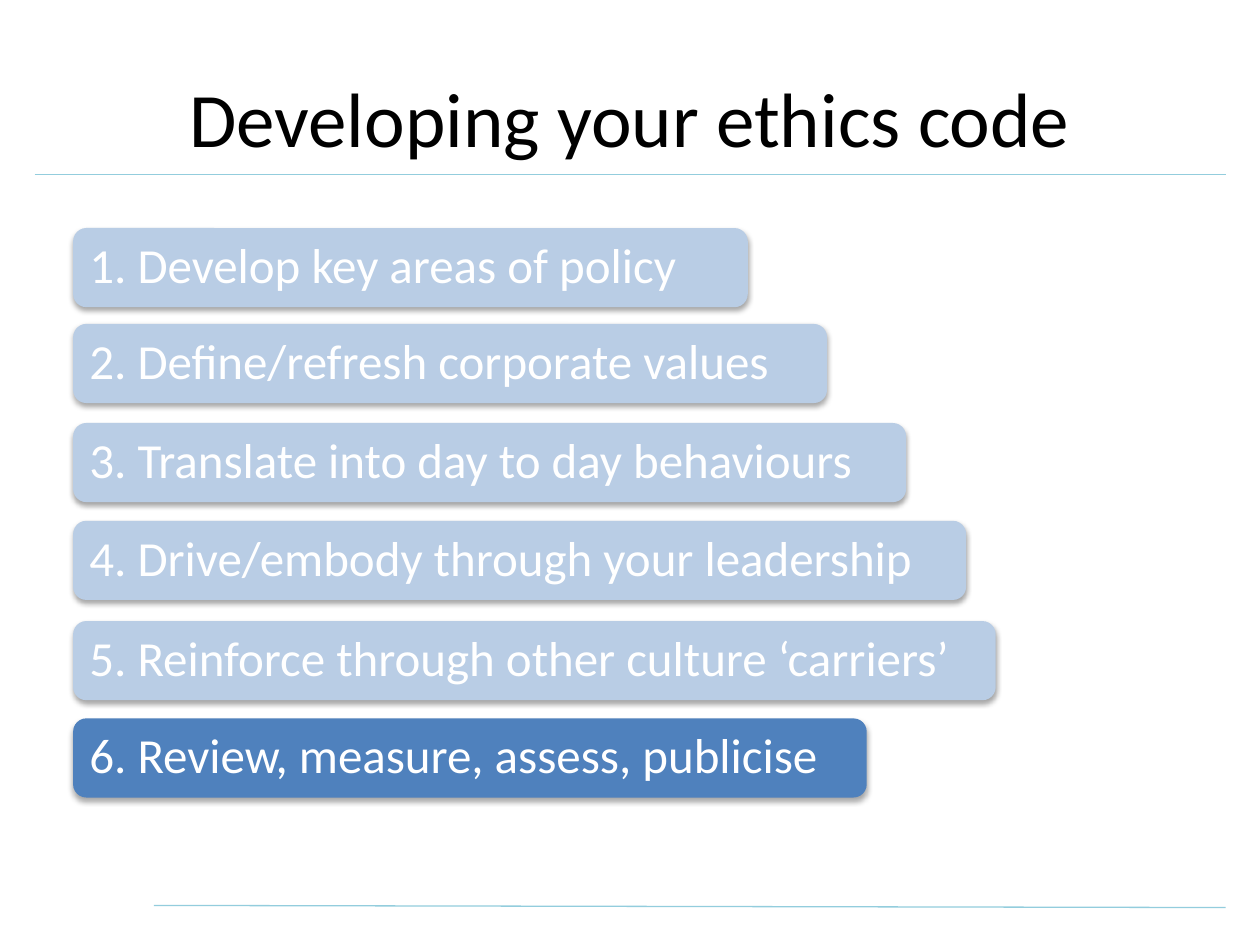
from lxml import etree
from pptx import Presentation
from pptx.dml.color import RGBColor
from pptx.enum import shapes, text
from pptx.oxml import parse_xml
from pptx.oxml.ns import nsdecls, qn
from pptx.util import Pt

BLACK = RGBColor(0x00, 0x00, 0x00)
WHITE = RGBColor(0xFF, 0xFF, 0xFF)
RULE = RGBColor(0x93, 0xCD, 0xDD)
PALE = RGBColor(0xB9, 0xCD, 0xE5)
STRONG = RGBColor(0x4F, 0x81, 0xBD)

FONT = "Calibri"
STEP_LEFT, STEP_HEIGHT = 41.8, 45.2

# wording, top, width, fill
STEPS = [
    ("1. Develop key areas of policy", 130.3, 385.5, PALE),
    ("2. Define/refresh corporate values", 185.1, 430.8, PALE),
    ("3. Translate into day to day behaviours", 241.7, 476, PALE),
    ("4. Drive/embody through your leadership", 297.6, 510.3, PALE),
    ("5. Reinforce through other culture ‘carriers’", 354.9, 527.2, PALE),
    ("6. Review, measure, assess, publicise", 410.5, 453.5, STRONG),
]


def add_rule(slide, x1, y1, x2, y2):
    line = slide.shapes.add_connector(
        shapes.MSO_CONNECTOR.STRAIGHT, Pt(x1), Pt(y1), Pt(x2), Pt(y2))
    line.line.color.rgb = RULE
    line.line.width = Pt(0.75)
    etree.SubElement(line._element.spPr, qn("a:effectLst"))


def write(tf, wording, size, color, align):
    tf.word_wrap = True
    tf.vertical_anchor = text.MSO_ANCHOR.MIDDLE
    p = tf.paragraphs[0]
    p.alignment = align
    r = p.add_run()
    r.text = wording
    r.font.name = FONT
    r.font.size = Pt(size)
    r.font.color.rgb = color
    return p


def add_title(slide, wording):
    box = slide.shapes.add_textbox(Pt(36), Pt(21.6), Pt(648), Pt(90))
    write(box.text_frame, wording, 44, BLACK, text.PP_ALIGN.CENTER)


def drop_shadow(sp):
    """Give the shape a soft shadow straight below it."""
    sp.shadow.inherit = False
    effects = sp._element.spPr.find(qn("a:effectLst"))
    effects.append(parse_xml(
        f'<a:outerShdw {nsdecls("a")} blurRad="{Pt(3.1)}" dist="{Pt(1.8)}" '
        'dir="5400000" rotWithShape="0"><a:srgbClr val="000000">'
        '<a:alpha val="35000"/></a:srgbClr></a:outerShdw>'))


def add_step(slide, wording, top, width, fill):
    sp = slide.shapes.add_shape(
        shapes.MSO_SHAPE.ROUNDED_RECTANGLE,
        Pt(STEP_LEFT), Pt(top), Pt(width), Pt(STEP_HEIGHT))
    sp.fill.solid()
    sp.fill.fore_color.rgb = fill
    sp.line.fill.background()
    drop_shadow(sp)
    tf = sp.text_frame
    tf.margin_left = tf.margin_right = Pt(7.2)
    tf.margin_top = tf.margin_bottom = Pt(7.2)
    p = write(tf, wording, 28, WHITE, text.PP_ALIGN.LEFT)
    p.line_spacing = 0.9


def main():
    prs = Presentation()
    prs.slide_width, prs.slide_height = Pt(720), Pt(540)
    slide = prs.slides.add_slide(prs.slide_layouts[6])
    add_rule(slide, 88, 517.4, 700.3, 518.6)
    add_rule(slide, 19.8, 99.8, 700.8, 99.8)
    add_title(slide, "Developing your ethics code")
    for step in STEPS:
        add_step(slide, *step)
    prs.save("out.pptx")


if __name__ == "__main__":
    main()
